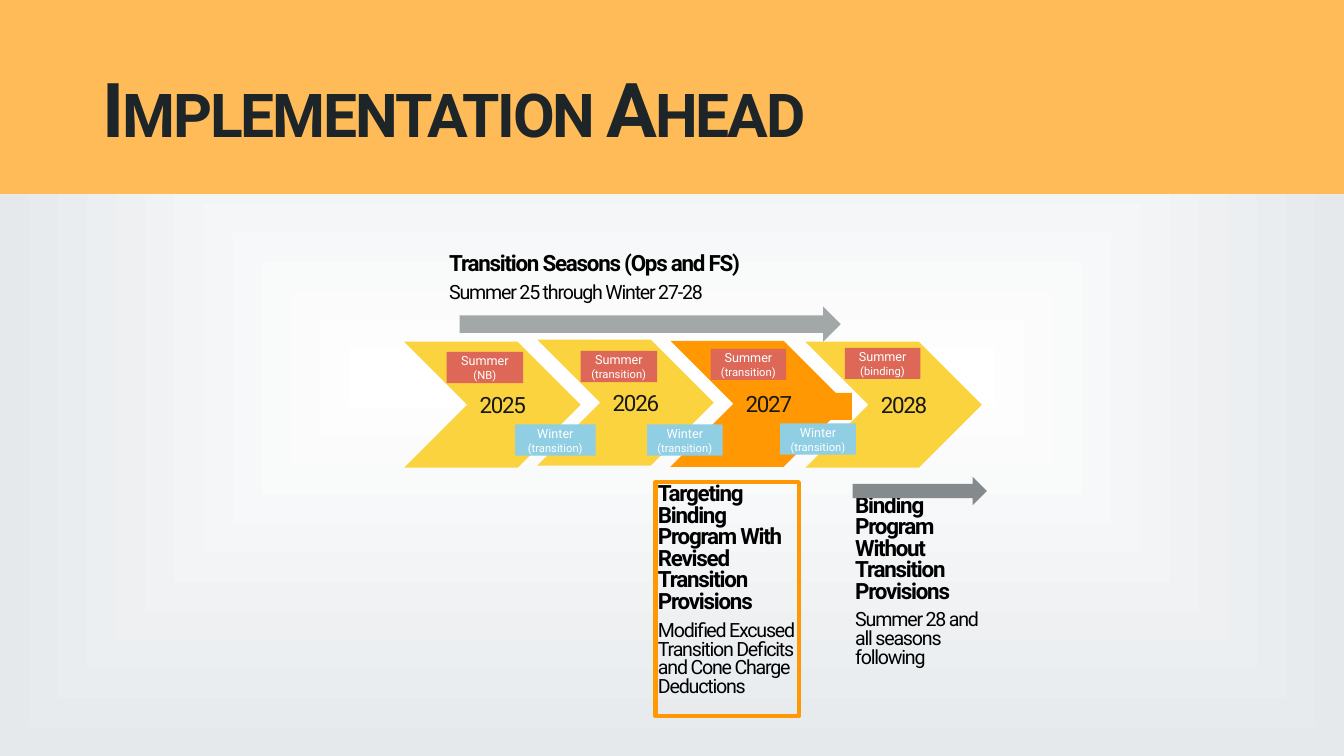
from lxml import etree
from pptx import Presentation
from pptx.dml.color import RGBColor
from pptx.enum.shapes import MSO_SHAPE
from pptx.enum.text import MSO_ANCHOR, MSO_AUTO_SIZE, PP_ALIGN
from pptx.oxml.ns import qn
from pptx.util import Pt

FONT = "Roboto"
WHITE = RGBColor(0xFF, 0xFF, 0xFF)
BLACK = RGBColor(0x00, 0x00, 0x00)
MIST = RGBColor(0xE5, 0xE9, 0xEC)
BANNER = RGBColor(0xFF, 0xBB, 0x58)
TITLE_INK = RGBColor(0x1D, 0x25, 0x28)
YEAR_INK = RGBColor(0x18, 0x18, 0x18)
YELLOW = RGBColor(0xFB, 0xD3, 0x3F)
ORANGE = RGBColor(0xFF, 0x98, 0x02)
RED = RGBColor(0xDD, 0x68, 0x58)
BLUE = RGBColor(0x8F, 0xCE, 0xE3)
LIGHT_GRAY = RGBColor(0xA2, 0xA7, 0xA8)
DARK_GRAY = RGBColor(0x85, 0x8B, 0x8D)

RECTANGLE = MSO_SHAPE.RECTANGLE
CHEVRON = MSO_SHAPE.CHEVRON
RIGHT_ARROW = MSO_SHAPE.RIGHT_ARROW
TOP, MIDDLE, BOTTOM = MSO_ANCHOR.TOP, MSO_ANCHOR.MIDDLE, MSO_ANCHOR.BOTTOM
LEFT, CENTER = PP_ALIGN.LEFT, PP_ALIGN.CENTER
NO_RESIZE, GROW = MSO_AUTO_SIZE.NONE, MSO_AUTO_SIZE.SHAPE_TO_FIT_TEXT


def write_text(shape, text, sizes, color=BLACK, bold_first=False, align=LEFT, anchor=TOP,
               margins=(1.8, 1.8), line_spacing=0.8, space_before=0, tracking=-87, resize=GROW):
    frame = shape.text_frame
    frame.text = text
    frame.word_wrap = True
    frame.auto_size = resize
    frame.vertical_anchor = anchor
    frame.margin_left = frame.margin_right = Pt(margins[0])
    frame.margin_top = frame.margin_bottom = Pt(margins[1])
    for index, (paragraph, size) in enumerate(zip(frame.paragraphs, sizes)):
        paragraph.alignment = align
        paragraph.line_spacing = line_spacing
        paragraph.space_before = Pt(space_before if index else 0)
        font = paragraph.runs[0].font
        font.name = FONT
        font.size = Pt(size)
        font.bold = bold_first and index == 0
        font.color.rgb = color
        paragraph.runs[0].font._element.set("spc", str(tracking))


def add_block(kind, left, top, width, height, fill=None, line=None, line_width=1):
    shape = slide.shapes.add_shape(kind, Pt(left), Pt(top), Pt(width), Pt(height))
    shape.shadow.inherit = False
    if fill is None:
        shape.fill.background()
    else:
        shape.fill.solid()
        shape.fill.fore_color.rgb = fill
    if line is None:
        shape.line.fill.background()
    else:
        shape.line.color.rgb = line
        shape.line.width = Pt(line_width)
    return shape


presentation = Presentation()
presentation.slide_width = Pt(960)
presentation.slide_height = Pt(540)
slide = presentation.slides.add_slide(presentation.slide_layouts[5])

background = slide.background.fill
background.gradient()
for stop, color, position in zip(background.gradient_stops, (WHITE, MIST), (0, 1)):
    stop.color.rgb = color
    stop.position = position
gradient = slide.element.find(".//" + qn("a:gradFill"))
gradient.remove(gradient.find(qn("a:lin")))
gradient_path = etree.SubElement(gradient, qn("a:path"), path="shape")
etree.SubElement(gradient_path, qn("a:fillToRect"), l="50000", t="50000", r="50000", b="50000")

title = slide.shapes.title
title.left, title.top, title.width, title.height = Pt(66), Pt(28.8), Pt(828), Pt(104.4)
write_text(title, "Implementation Ahead", [54], color=TITLE_INK, bold_first=True, anchor=MIDDLE,
           margins=(7.2, 3.6), line_spacing=0.9, tracking=-150, resize=NO_RESIZE)
title.text_frame.paragraphs[0].runs[0].font._element.set("cap", "small")
banner = add_block(RECTANGLE, 0, -5.76, 960, 144, BANNER, BANNER)
title.element.addprevious(banner.element)

years = [
    ("2025", 288.7, 244.1, YELLOW),
    ("2026", 383.8, 242.6, YELLOW),
    ("2027", 478.8, 243.4, ORANGE),
    ("2028", 575.3, 244.1, YELLOW),
]
for year, left, top, fill in years:
    add_block(CHEVRON, left, top, 126, 90, fill)
    label_fill = ORANGE if fill == ORANGE else None
    label = add_block(RECTANGLE, left + 52, top + 37.2, 77.8, 19.4, label_fill)
    write_text(label, year, [16], color=YEAR_INK, anchor=MIDDLE)

add_block(RIGHT_ARROW, 328.3, 218.9, 272.2, 25.2, LIGHT_GRAY)

notes = [
    ("Transition Seasons (Ops and FS)\nSummer 25 through Winter 27-28",
     319, 173.5, 281.5, 44.6, BOTTOM, None),
    ("Binding Program Without Transition Provisions\nSummer 28 and all seasons following",
     609.1, 352.4, 102.5, 133.9, TOP, None),
    ("Targeting Binding Program With Revised Transition Provisions\n"
     "Modified Excused Transition Deficits and Cone Charge Deductions",
     468.2, 344.4, 102.5, 167, TOP, ORANGE),
]
for text, left, top, width, height, anchor, line in notes:
    note = add_block(RECTANGLE, left, top, width, height, line=line, line_width=3)
    write_text(note, text, [16, 14], bold_first=True, anchor=anchor, space_before=6)

add_block(RIGHT_ARROW, 609.1, 340.6, 95.8, 20.2, DARK_GRAY)

seasons = [
    ("Summer\n(NB)", 319, 251.3, 54.7, RED),
    ("Summer\n(transition)", 414.7, 250.6, 54.7, RED),
    ("Summer\n(transition)", 507.6, 249.1, 54, RED),
    ("Summer\n(binding)", 603.4, 248.4, 54, RED),
    ("Winter\n(transition)", 367.9, 303.1, 57.6, BLUE),
    ("Winter\n(transition)", 462.2, 303.1, 54, BLUE),
    ("Winter\n(transition)", 557.3, 302.4, 54, BLUE),
]
for text, left, top, width, fill in seasons:
    tag = add_block(RECTANGLE, left, top, width, 22.3, fill)
    write_text(tag, text, [9, 8], color=WHITE, align=CENTER, anchor=MIDDLE, margins=(2, 3.6),
               line_spacing=1.0, tracking=0, resize=NO_RESIZE)

presentation.save("out.pptx")
